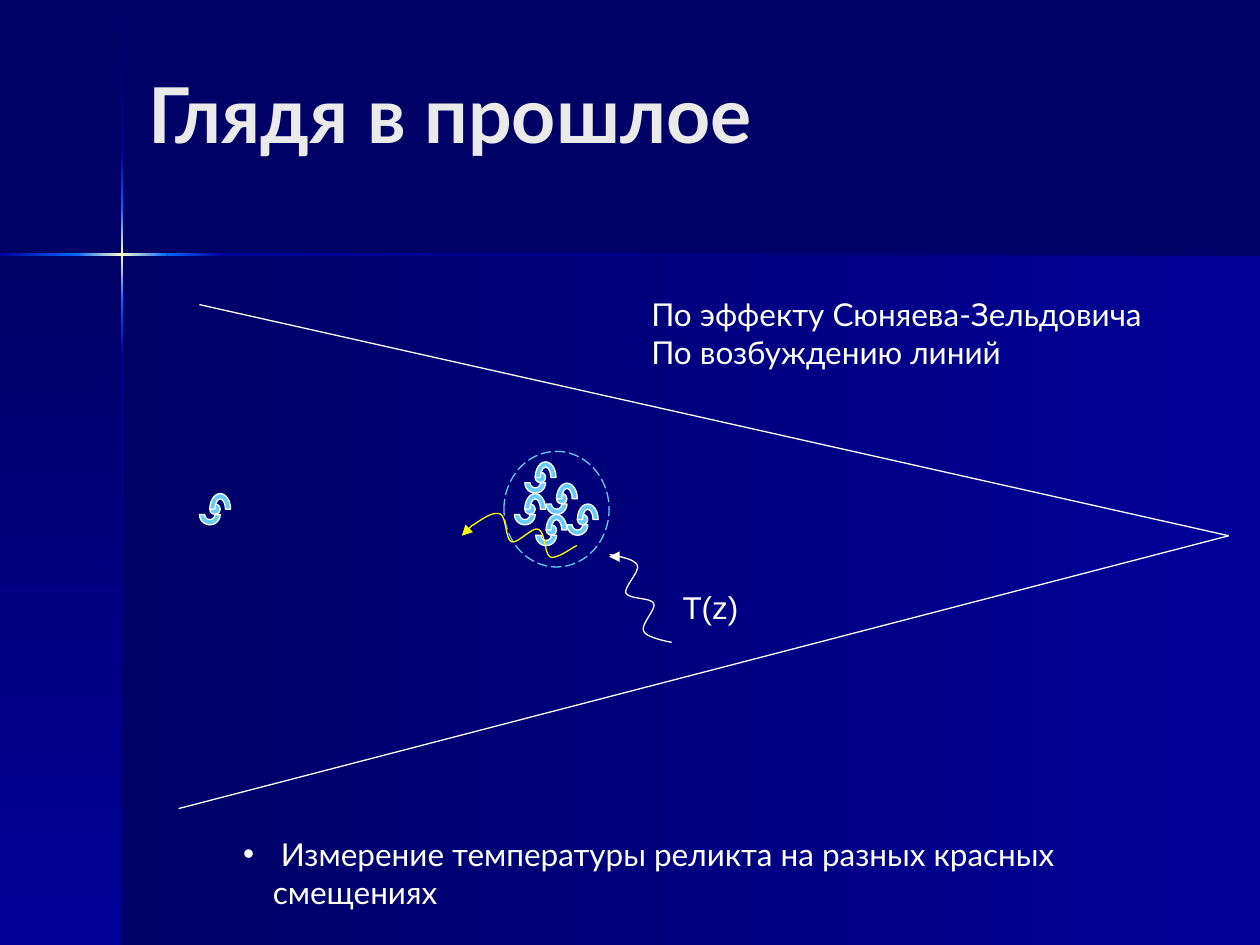
from lxml.etree import SubElement
from pptx import Presentation
from pptx.dml.color import RGBColor
from pptx.enum.dml import MSO_LINE
from pptx.enum.shapes import MSO_CONNECTOR, MSO_SHAPE
from pptx.enum.text import MSO_ANCHOR, MSO_AUTO_SIZE, PP_ALIGN
from pptx.oxml.ns import qn
from pptx.util import Cm, Pt

# Content, lengths in cm
TITLE = "Глядя в прошлое"
METHODS = "По эффекту Сюняева-Зельдовича\vПо возбуждению линий"
TEMPERATURE = "T(z)"
MEASUREMENT = " Измерение температуры реликта на разных красных смещениях"

NIGHT, NAVY, BLUE, GLOW = "000066", "000099", "0066FF", "FFFFCC"
WHITE, SKY, YELLOW, PALE = "FFFFFF", "66CCFF", "FFFF00", "EAEAEA"

WIDTH, HEIGHT = 25.4, 19.05
CROSS_X, CROSS_Y, BEAM = 2.46, 5.13, 0.05

# Beams of the cross: start, end, gradient colours
VERTICAL_BEAMS = [
    (0.03, 3.07, [NIGHT, NAVY]),
    (7.16, HEIGHT, [NAVY, NIGHT]),
    (6.05, 7.16, [BLUE, NAVY]),
    (3.07, 4.19, [NAVY, BLUE]),
    (4.19, 6.05, [BLUE, GLOW, BLUE]),
]
HORIZONTAL_BEAMS = [
    (4.5, WIDTH, [NAVY, NIGHT]),
    (0, 1.55, [NAVY, BLUE]),
    (3.38, 4.5, [BLUE, NAVY]),
    (1.52, 3.38, [BLUE, GLOW, BLUE]),
]

OBSERVER = (24.77, 10.8)
CONE_ENDS = [(4.02, 6.14), (3.6, 16.3)]

GALAXY_UNIT = 0.21
GALAXIES = [(10.58, 9.31), (4.02, 9.95), (11.01, 9.74),
            (11.43, 10.16), (10.37, 9.95), (10.8, 10.37)]
CLUSTER = (10.16, 9.1, 2.12, 2.33)

# Photons: colour, Bezier points of the wave, arrow start and tip
PHOTONS = [
    (WHITE,
     [(12.29, 11.18), (12.55, 11.23), (12.8, 11.28), (12.85, 11.4),
      (12.9, 11.53), (12.57, 11.84), (12.62, 11.96), (12.7, 12.09),
      (13.13, 12.04), (13.18, 12.17), (13.23, 12.29), (12.9, 12.6),
      (12.98, 12.73), (13.03, 12.85), (13.44, 12.93), (13.54, 12.95)],
     (12.49, 11.22), (12.28, 11.22)),
    (YELLOW,
     [(9.53, 10.59), (9.73, 10.46), (9.93, 10.31), (10.08, 10.36),
      (10.21, 10.41), (10.19, 10.87), (10.31, 10.92), (10.44, 10.97),
      (10.72, 10.62), (10.85, 10.67), (11, 10.72), (10.97, 11.18),
      (11.1, 11.23), (11.23, 11.28), (11.56, 11.02), (11.63, 11)],
     (9.53, 10.58), (9.31, 10.8)),
]


def rgb(color):
    return RGBColor.from_string(color)


def outline(line, color):
    line.color.rgb = rgb(color)
    line.width = Pt(0.75)


def add_preset(parent, preset, box, fill=None, line=None):
    shape = parent.add_shape(preset, *map(Cm, box))
    shape.shadow.inherit = False
    if fill:
        shape.fill.solid()
        shape.fill.fore_color.rgb = rgb(fill)
    else:
        shape.fill.background()
    if line:
        outline(shape.line, line)
    else:
        shape.line.fill.background()
    return shape


def add_gradient(parent, box, colors, angle):
    """Rectangle with evenly spaced stops; angle runs clockwise."""
    shape = add_preset(parent, MSO_SHAPE.RECTANGLE, box)
    props = shape._element.spPr
    gradient = props.makeelement(qn("a:gradFill"), {"rotWithShape": "1"})
    props.replace(props.find(qn("a:noFill")), gradient)
    stops = SubElement(gradient, qn("a:gsLst"))
    for i, color in enumerate(colors):
        stop = SubElement(stops, qn("a:gs"), pos=str(i * 100000 // (len(colors) - 1)))
        SubElement(stop, qn("a:srgbClr"), val=color)
    SubElement(gradient, qn("a:lin"), ang=str(angle * 60000), scaled="0")


def add_line(parent, start, end, color, arrow=False):
    connector = parent.add_connector(MSO_CONNECTOR.STRAIGHT, *map(Cm, start + end))
    outline(connector.line, color)
    if arrow:
        SubElement(connector.line._get_or_add_ln(), qn("a:tailEnd"), type="triangle")
    SubElement(connector._element.spPr, qn("a:effectLst"))


def add_wave(parent, points, color, steps=12):
    """Draw a chain of cubic Bezier segments."""
    curve = []
    for i in range(0, len(points) - 1, 3):
        for step in range(1, steps + 1):
            t = step / steps
            weights = ((1 - t) ** 3, 3 * t * (1 - t) ** 2, 3 * t * t * (1 - t), t ** 3)
            curve.append(tuple(
                Cm(sum(w * p[axis] for w, p in zip(weights, points[i:i + 4])))
                for axis in (0, 1)))
    builder = parent.build_freeform(*map(Cm, points[0]))
    builder.add_line_segments(curve, close=False)
    wave = builder.convert_to_shape()
    wave.shadow.inherit = False
    wave.fill.background()
    outline(wave.line, color)


def add_galaxy(parent, x, y):
    u = GALAXY_UNIT
    galaxy = parent.add_group_shape().shapes
    add_preset(galaxy, MSO_SHAPE.OVAL, (x + u, y + u, u, u), SKY, WHITE)
    add_preset(galaxy, MSO_SHAPE.BLOCK_ARC, (x + u, y, 2 * u, 3 * u), SKY, WHITE)
    lower_arm = add_preset(galaxy, MSO_SHAPE.BLOCK_ARC, (x, y + u, 2 * u, 2 * u), SKY, WHITE)
    lower_arm.rotation = 180


def write(shape, text, box, size=18, font="Lato", color=WHITE, bold=False,
          wrap=False, anchor=MSO_ANCHOR.TOP, bullet_indent=None):
    shape.left, shape.top, shape.width, shape.height = map(Cm, box)
    frame = shape.text_frame
    frame.text = text
    frame.auto_size = MSO_AUTO_SIZE.NONE
    frame.word_wrap = wrap
    frame.vertical_anchor = anchor
    paragraph = frame.paragraphs[0]
    paragraph.alignment = PP_ALIGN.LEFT
    if bullet_indent:
        props = paragraph._p.get_or_add_pPr()
        props.set("marL", str(Cm(bullet_indent)))
        props.set("indent", str(-Cm(bullet_indent)))
        SubElement(props, qn("a:buFont"), typeface="Arial")
        SubElement(props, qn("a:buChar"), char="•")
    for run in paragraph.runs:
        run.font.size, run.font.name, run.font.bold = Pt(size), font, bold
        run.font.color.rgb = rgb(color)


def main():
    deck = Presentation()
    deck.slide_width, deck.slide_height = Cm(WIDTH), Cm(HEIGHT)
    slide = deck.slides.add_slide(deck.slide_layouts[5])
    shapes = slide.shapes
    slide.background.fill.solid()
    slide.background.fill.fore_color.rgb = rgb(NIGHT)

    # Backdrop panels and glowing cross
    backdrop = shapes.add_group_shape().shapes
    below = HEIGHT - CROSS_Y
    add_gradient(backdrop, (CROSS_X, CROSS_Y, WIDTH - CROSS_X, below), [NIGHT, NAVY], 0)
    add_gradient(backdrop, (0, CROSS_Y, CROSS_X, below), [NIGHT, NAVY], 90)
    for start, end, colors in VERTICAL_BEAMS:
        add_gradient(backdrop, (CROSS_X - BEAM / 2, start, BEAM, end - start), colors, 90)
    for start, end, colors in HORIZONTAL_BEAMS:
        add_gradient(backdrop, (start, CROSS_Y - BEAM / 2, end - start, BEAM), colors, 0)

    # Title and measurement
    write(shapes.title, TITLE, (2.74, 0.43, 23.65, 3.68), size=44, color=PALE,
          bold=True, wrap=True, anchor=MSO_ANCHOR.MIDDLE)
    captions = [
        (MEASUREMENT, (4.65, 16.71, 19.89, 1.02), {"wrap": True, "bullet_indent": 0.6}),
        (TEMPERATURE, (13.51, 11.73, 1.65, 1.02), {"font": "Arial"}),
        (METHODS, (12.88, 5.82, 10.41, 1.78), {}),
    ]

    # Light cone, galaxies and cluster
    for end in CONE_ENDS:
        add_line(shapes, end, OBSERVER, WHITE)
    for x, y in GALAXIES:
        add_galaxy(shapes, x, y)
    cluster = add_preset(shapes, MSO_SHAPE.OVAL, CLUSTER, line=SKY)
    cluster.line.dash_style = MSO_LINE.LONG_DASH

    # Photons
    for color, points, start, tip in PHOTONS:
        add_wave(shapes, points, color)
        add_line(shapes, start, tip, color, arrow=True)

    # Captions
    for text, box, style in captions:
        write(shapes.add_textbox(0, 0, 0, 0), text, box, **style)

    deck.save("out.pptx")


if __name__ == "__main__":
    main()
